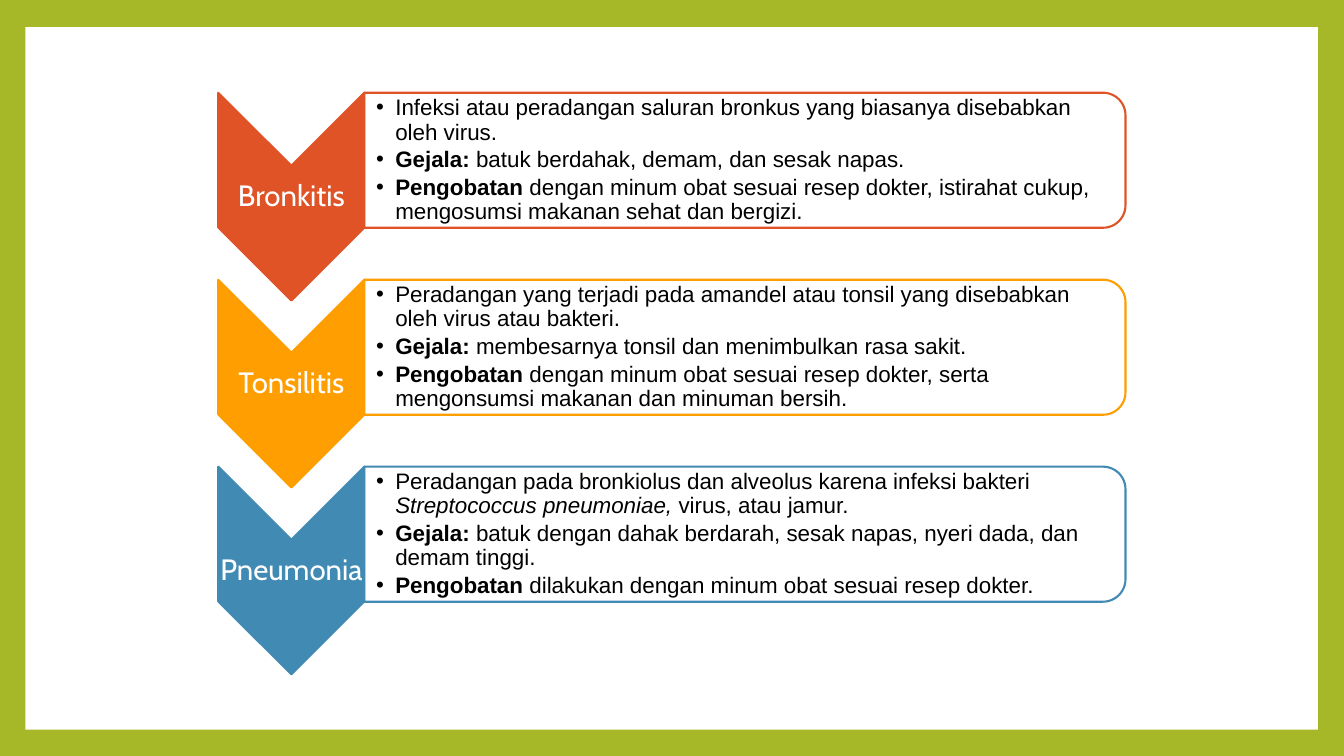
import lxml.etree
import pptx
import pptx.dml.color
import pptx.enum.shapes
import pptx.enum.text
import pptx.oxml.ns
import pptx.util

SHAPE = pptx.enum.shapes.MSO_SHAPE
ALIGN = pptx.enum.text.PP_ALIGN

# Positions and sizes are percentages of the slide's width and height.
FIRST_ROW, ROW_STEP = 12.27, 24.73
ARROW_LEFT, ARROW_WIDTH, ARROW_HEIGHT = 16.24, 10.88, 27.47
LABEL_DROP, LABEL_HEIGHT = 9.6, 8.27
CARD_LEFT, CARD_WIDTH, CARD_HEIGHT = 27.1, 56.64, 17.87
LIST_DROP, LIST_WIDTH, LIST_HEIGHT = 0.87, 56.19, 16.13

SYMPTOMS = ("Gejala: ", "bold")
TREATMENT = ("Pengobatan ", "bold")
DISEASES = [
    ("Bronkitis", "DF5327", [
        [("Infeksi atau peradangan saluran bronkus yang biasanya disebabkan oleh virus.", "")],
        [SYMPTOMS, ("batuk berdahak, demam, dan sesak napas.", "")],
        [TREATMENT, ("dengan minum obat sesuai resep dokter, istirahat cukup, "
                     "mengosumsi makanan sehat dan bergizi.", "")],
    ]),
    ("Tonsilitis", "FE9E00", [
        [("Peradangan yang terjadi pada amandel atau tonsil yang disebabkan "
          "oleh virus atau bakteri.", "")],
        [SYMPTOMS, ("membesarnya tonsil dan menimbulkan rasa sakit.", "")],
        [TREATMENT, ("dengan minum obat sesuai resep dokter, serta "
                     "mengonsumsi makanan dan minuman bersih.", "")],
    ]),
    ("Pneumonia", "418AB3", [
        [("Peradangan pada bronkiolus dan alveolus karena infeksi bakteri ", ""),
         ("Streptococcus pneumoniae,", "italic"), (" virus, atau jamur.", "")],
        [SYMPTOMS, ("batuk dengan dahak berdarah, sesak napas, nyeri dada, dan demam tinggi.", "")],
        [TREATMENT, ("dilakukan dengan minum obat sesuai resep dokter.", "")],
    ]),
]


def color(hex_string):
    return pptx.dml.color.RGBColor.from_string(hex_string)


def add_xml(parent, tag, **attributes):
    return lxml.etree.SubElement(parent, pptx.oxml.ns.qn(tag), attributes)


class SlideBuilder:
    label_font, label_size = "Cabin", 21
    list_font, list_size = "Arial", 16

    def __init__(self, deck, layout, background):
        self.width, self.height = deck.slide_width, deck.slide_height
        self.slide = deck.slides.add_slide(layout)
        fill = self.slide.background.fill
        fill.solid()
        fill.fore_color.rgb = color(background)

    def frame(self, left, top, width, height):
        """Turn percentages of the slide into lengths."""
        return [pptx.util.Emu(round(share * side / 100)) for share, side in
                zip((left, top, width, height), (self.width, self.height) * 2)]

    def shape(self, kind, area, fill, line=None, opacity=None, turned=False):
        """Add a preset shape; a turned one is rotated by 90 degrees to fill the area."""
        left, top, width, height = self.frame(*area)
        if turned:
            shift = (width - height) // 2
            left, top, width, height = left + shift, top - shift, height, width
        shape = self.slide.shapes.add_shape(kind, left, top, width, height)
        shape.shadow.inherit = False
        shape.rotation = 90 if turned else 0
        shape.fill.solid()
        shape.fill.fore_color.rgb = color(fill)
        if opacity:
            solid = shape.element.spPr.find(pptx.oxml.ns.qn("a:solidFill"))
            add_xml(solid[0], "a:alpha", val=str(opacity * 1000))
        if line:
            shape.line.color.rgb = color(line)
            shape.line.width = pptx.util.Pt(1.5)
        else:
            shape.line.fill.background()

    def set_frame(self, text_frame, left_inset=0.75):
        text_frame.word_wrap = True
        text_frame.auto_size = pptx.enum.text.MSO_AUTO_SIZE.NONE
        text_frame.vertical_anchor = pptx.enum.text.MSO_ANCHOR.MIDDLE
        text_frame.margin_left = pptx.util.Pt(left_inset)
        text_frame.margin_top = text_frame.margin_right = pptx.util.Pt(0.75)
        text_frame.margin_bottom = pptx.util.Pt(0.75)

    def set_paragraph(self, para, font, size, text_color, align, space_after):
        para.alignment = align
        para.line_spacing = 0.9
        para.space_before = pptx.util.Pt(0)
        para.space_after = pptx.util.Pt(space_after)
        para.font.name = font
        para.font.size = pptx.util.Pt(size)
        para.font.bold = False
        para.font.color.rgb = color(text_color)

    def label(self, area, text):
        box = self.slide.shapes.add_textbox(*self.frame(*area))
        self.set_frame(box.text_frame)
        para = box.text_frame.paragraphs[0]
        para.text = text
        self.set_paragraph(para, self.label_font, self.label_size, "FFFFFF", ALIGN.CENTER, 7.35)

    def bullet_list(self, placeholder, area, items):
        placeholder.left, placeholder.top, placeholder.width, placeholder.height = self.frame(*area)
        tree = placeholder.element.getparent()
        tree.append(placeholder.element)  # bring in front of its card
        text_frame = placeholder.text_frame
        self.set_frame(text_frame, left_inset=8.5)
        for number, spans in enumerate(items):
            para = text_frame.add_paragraph() if number else text_frame.paragraphs[0]
            indent = pptx.util.Inches(0.19)
            properties = para._p.get_or_add_pPr()
            properties.set("marL", str(indent))
            properties.set("indent", str(-indent))
            add_xml(properties, "a:buFont", typeface="Arial")
            add_xml(properties, "a:buChar", char="•")
            self.set_paragraph(para, self.list_font, self.list_size, "000000", ALIGN.LEFT, 2.4)
            for text, style in spans:
                span = para.add_run()
                span.text = text
                if style == "bold":
                    span.font.bold = True
                elif style == "italic":
                    span.font.italic = True


def main():
    deck = pptx.Presentation()
    deck.slide_width = pptx.util.Inches(13.33)
    deck.slide_height = pptx.util.Inches(7.5)
    builder = SlideBuilder(deck, deck.slide_layouts.get_by_name("Comparison"), "A6B727")
    title, *bodies = builder.slide.placeholders
    builder.shape(SHAPE.RECTANGLE, (1.88, 3.6, 96.17, 92.93), "FFFFFF")

    for row, (name, accent, items) in enumerate(DISEASES):
        top = FIRST_ROW + row * ROW_STEP
        builder.shape(SHAPE.CHEVRON, (ARROW_LEFT, top, ARROW_WIDTH, ARROW_HEIGHT),
                      accent, accent, turned=True)
        builder.label((ARROW_LEFT, top + LABEL_DROP, ARROW_WIDTH, LABEL_HEIGHT), name)
        builder.shape(SHAPE.ROUND_2_SAME_RECTANGLE, (CARD_LEFT, top, CARD_WIDTH, CARD_HEIGHT),
                      "FFFFFF", accent, opacity=90, turned=True)
        builder.bullet_list(bodies[row], (CARD_LEFT, top + LIST_DROP, LIST_WIDTH, LIST_HEIGHT), items)

    for unused in (title, *bodies[len(DISEASES):]):
        unused.element.getparent().remove(unused.element)
    deck.save("out.pptx")


if __name__ == "__main__":
    main()
